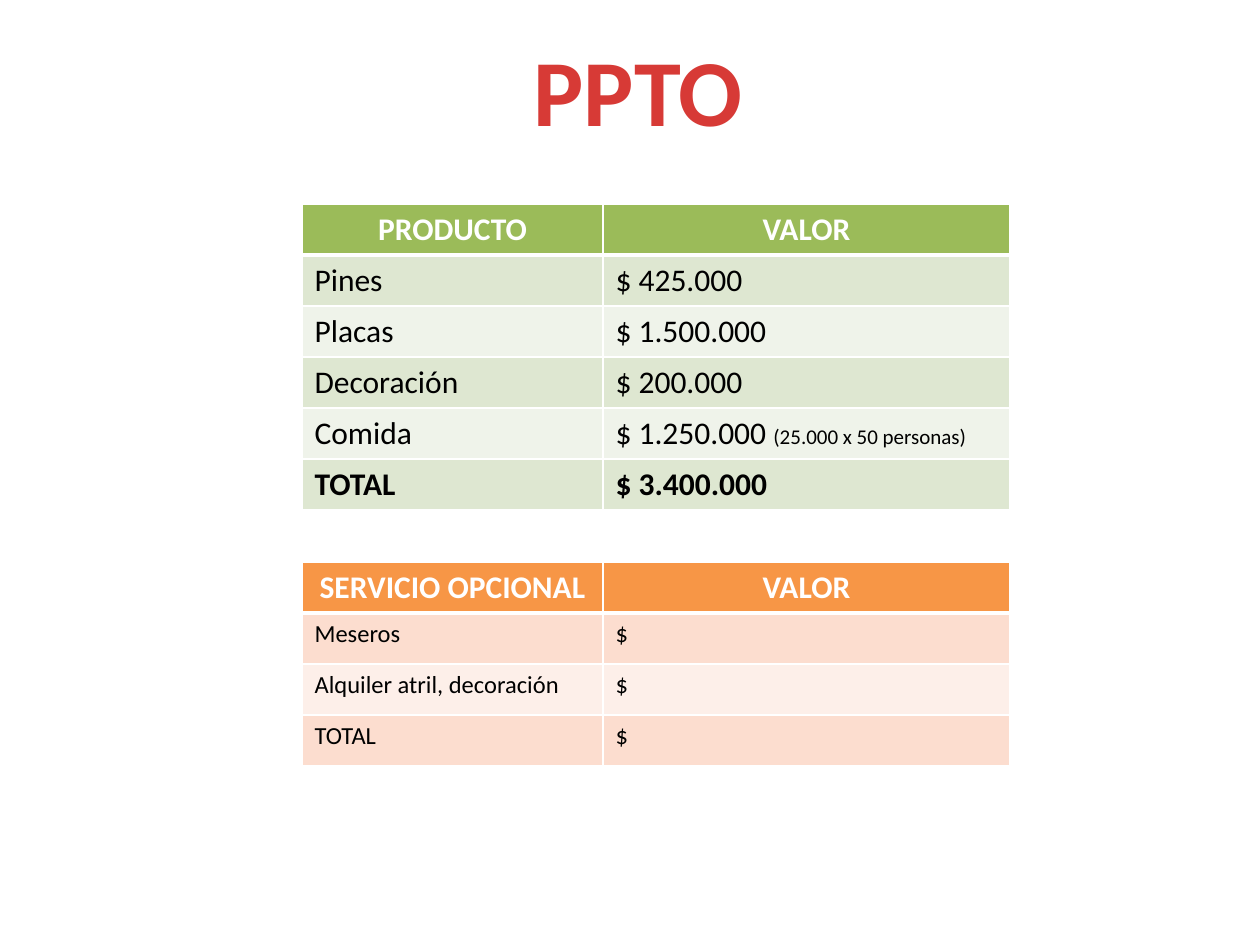
from dataclasses import dataclass

from lxml import etree
from pptx import Presentation, util as u
from pptx.dml.color import RGBColor
from pptx.enum import text
from pptx.oxml.ns import qn

PX = 914400 // 126
LEFT, ROW = 302, 51
COLS = (301, 407)
WHITE = RGBColor(0xFF, 0xFF, 0xFF)
BLACK = RGBColor(0, 0, 0)
RED = RGBColor(0xD7, 0x3A, 0x36)
GREEN = RGBColor(0x9B, 0xBB, 0x59)
SAGE = RGBColor(0xDE, 0xE7, 0xD1)
MINT = RGBColor(0xEF, 0xF3, 0xEA)
ORANGE = RGBColor(0xF7, 0x96, 0x46)
PEACH = RGBColor(0xFC, 0xDD, 0xCF)
CREAM = RGBColor(0xFD, 0xEF, 0xE9)


@dataclass(frozen=True)
class Budget:
    top: int
    head: RGBColor
    bands: tuple[RGBColor, RGBColor]
    size: int
    strong: bool  # bold last row
    rows: tuple[tuple[str, str], ...]
    notes: dict[int, str]  # small print after the value, by row


BUDGETS = (
    Budget(204, GREEN, (SAGE, MINT), 18, True, (
        ("PRODUCTO", "VALOR"),
        ("Pines", "$ 425.000"),
        ("Placas", "$ 1.500.000"),
        ("Decoración", "$ 200.000"),
        ("Comida", "$ 1.250.000 "),
        ("TOTAL", "$ 3.400.000"),
    ), {4: "(25.000 x 50 personas)"}),
    Budget(562, ORANGE, (PEACH, CREAM), 14, False, (
        ("SERVICIO OPCIONAL", "VALOR"),
        ("Meseros", "$"),
        ("Alquiler atril, decoración", "$"),
        ("TOTAL", "$"),
    ), {}),
)


def write(para, words: str, size: int, color: RGBColor, bold: bool) -> None:
    run = para.add_run()
    run.text = words
    style = {"name": "Calibri", "size": u.Pt(size), "bold": bold}
    for key, value in style.items():
        setattr(run.font, key, value)
    run.font.color.rgb = color


def edge(cell, row: int) -> None:
    """Rule a cell in white, thicker under the header."""
    props = cell._tc.get_or_add_tcPr()
    wide = {"T": 3 if row == 1 else 1, "B": 3 if row == 0 else 1}
    for side in "LRTB":
        line = etree.SubElement(props, qn(f"a:ln{side}"),
                                w=str(u.Pt(wide.get(side, 1))))
        fill = etree.SubElement(line, qn("a:solidFill"))
        etree.SubElement(fill, qn("a:srgbClr"), val=str(WHITE))


def draw(slide, plan: Budget) -> None:
    count = len(plan.rows)
    grid = slide.shapes.add_table(
        count, len(COLS), LEFT * PX, plan.top * PX,
        sum(COLS) * PX, count * ROW * PX).table
    for col, width in zip(grid.columns, COLS):
        col.width = width * PX
    for r, words in enumerate(plan.rows):
        head = r == 0
        grid.rows[r].height = ROW * PX
        for c, word in enumerate(words):
            cell = grid.cell(r, c)
            edge(cell, r)
            cell.fill.solid()
            cell.fill.fore_color.rgb = plan.head if head else plan.bands[(r - 1) % 2]
            para = cell.text_frame.paragraphs[0]
            para.alignment = text.PP_ALIGN.CENTER if head else text.PP_ALIGN.LEFT
            write(para, word, 18 if head else plan.size,
                  WHITE if head else BLACK,
                  head or (plan.strong and r == count - 1))
            if c == 1 and r in plan.notes:
                write(para, plan.notes[r], 12, BLACK, False)


def title(slide) -> None:
    box = slide.shapes.add_textbox(520 * PX, 26 * PX, 236 * PX, 127 * PX)
    frame = box.text_frame
    frame.word_wrap = False
    frame.auto_size = text.MSO_AUTO_SIZE.SHAPE_TO_FIT_TEXT
    para = frame.paragraphs[0]
    para.alignment = text.PP_ALIGN.CENTER
    write(para, "PPTO", 54, RED, True)


def main() -> None:
    deck = Presentation()
    deck.slide_width, deck.slide_height = u.Inches(10), u.Inches(7.5)
    slide = deck.slides.add_slide(deck.slide_layouts[6])
    title(slide)
    for plan in BUDGETS:
        draw(slide, plan)
    deck.save("out.pptx")


if __name__ == "__main__":
    main()
